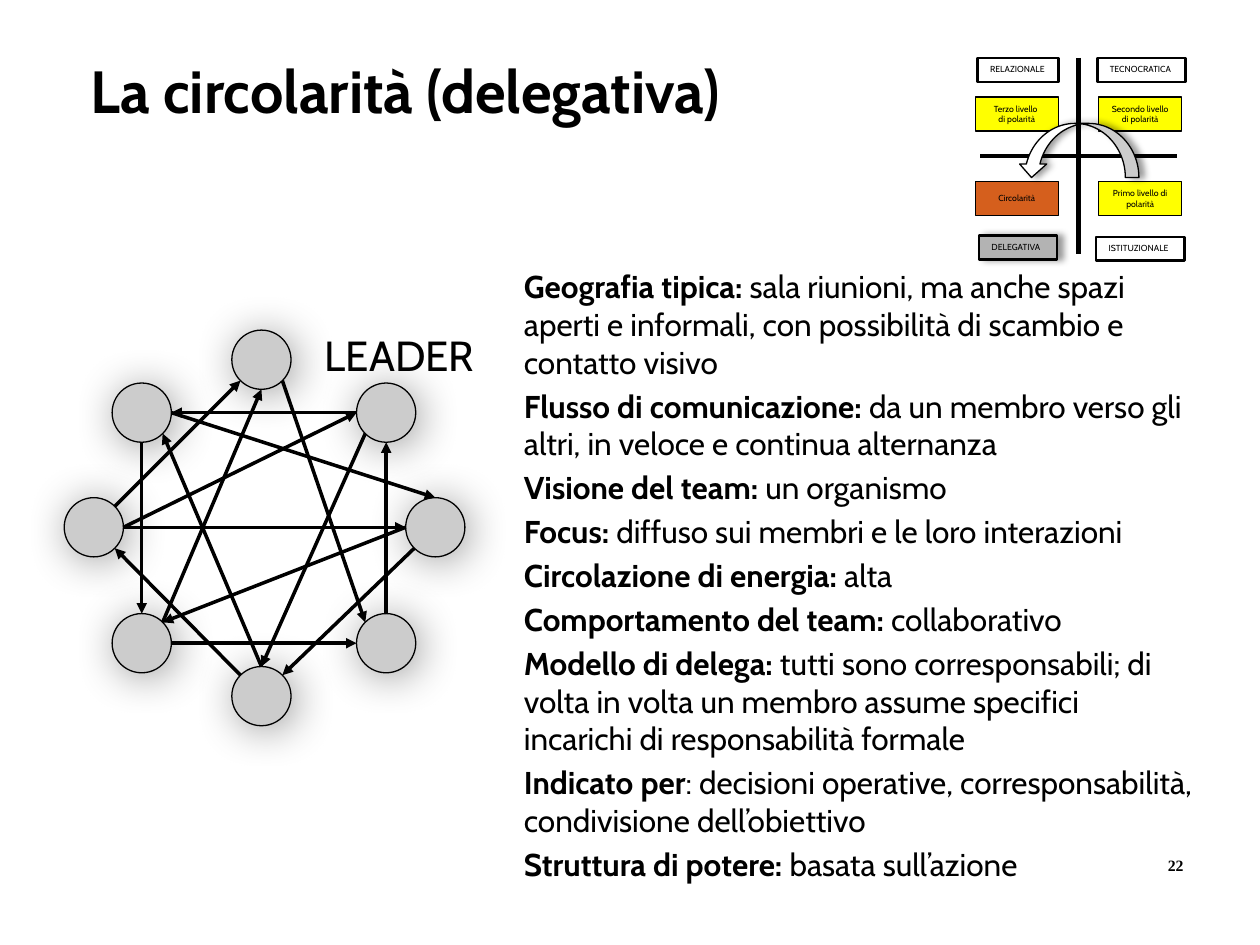
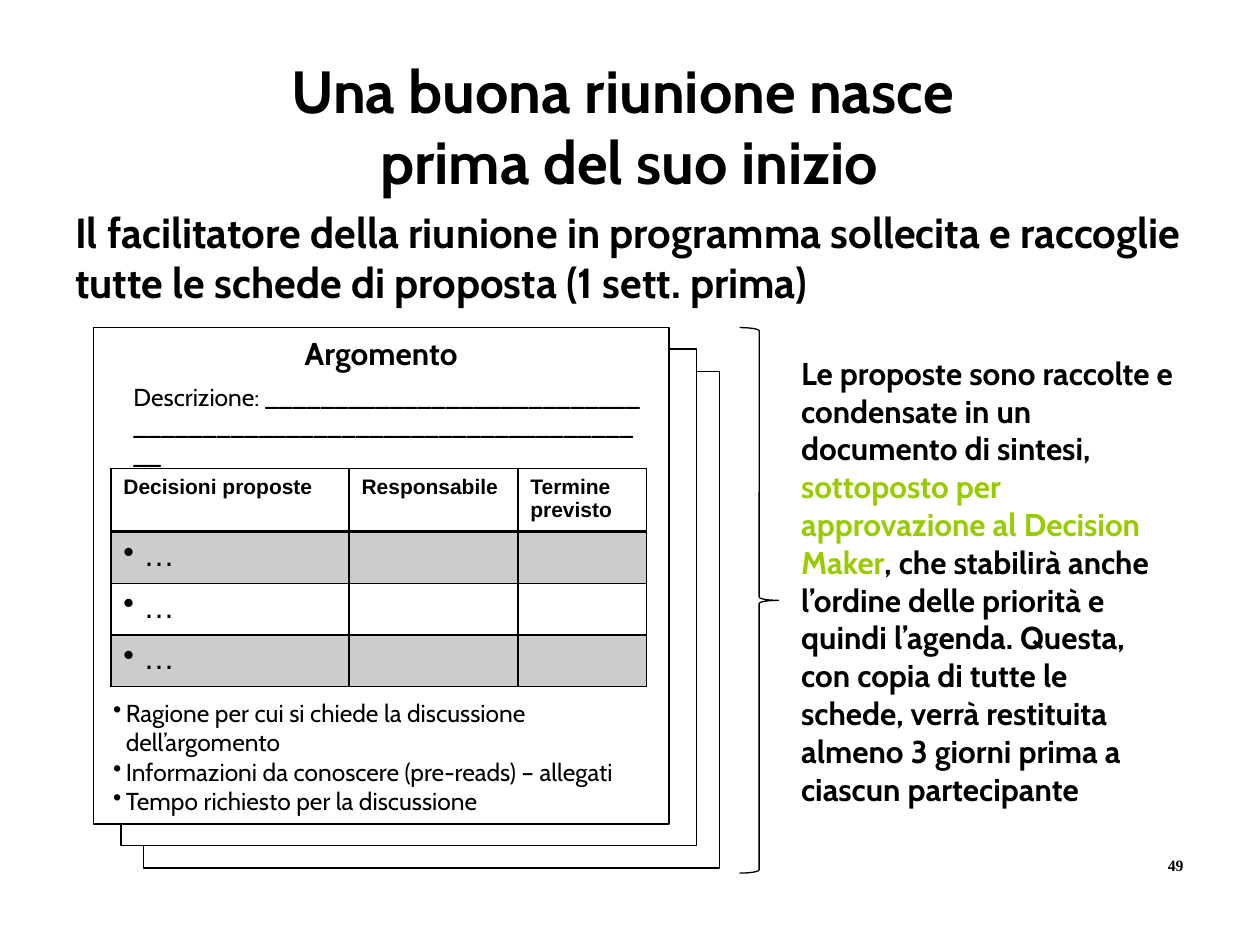
from math import cos, radians, sin

from lxml import etree
from pptx import Presentation
from pptx.dml.color import RGBColor
from pptx.enum.shapes import MSO_CONNECTOR, MSO_SHAPE
from pptx.enum.text import MSO_ANCHOR, MSO_AUTO_SIZE, PP_ALIGN
from pptx.oxml.ns import qn
from pptx.util import Inches, Pt

RECTANGLE, OVAL = MSO_SHAPE.RECTANGLE, MSO_SHAPE.OVAL
CURVED_ARROW, BRACE = MSO_SHAPE.CURVED_UP_ARROW, MSO_SHAPE.RIGHT_BRACE
STRAIGHT = MSO_CONNECTOR.STRAIGHT
LEFT, CENTER = PP_ALIGN.LEFT, PP_ALIGN.CENTER
TOP, MIDDLE = MSO_ANCHOR.TOP, MSO_ANCHOR.MIDDLE
FIT_SHAPE = MSO_AUTO_SIZE.SHAPE_TO_FIT_TEXT

BLACK, WHITE, GREY, SILVER = "000000", "FFFFFF", "CCCCCC", "B3B3B3"
YELLOW, ORANGE, GREEN = "FFFF00", "D55F1D", "99CC00"
CABIN, ARIAL, TIMES = "Cabin", "Arial", "Times New Roman"


def color(hex_string):
    """Turn a hex string into a colour."""
    return RGBColor.from_string(hex_string)


def add_xml(parent, tag, **attributes):
    """Append a DrawingML element with the given attributes."""
    values = {name: str(value) for name, value in attributes.items()}
    return etree.SubElement(parent, qn("a:" + tag), values)


def write(frame, paragraphs, size=18, font=CABIN, bold=False, ink=BLACK, align=LEFT,
          anchor=TOP, wrap=True, before=0, bullet=None, indent=0):
    """Fill a text frame; a paragraph is a string or a list of (text, format) runs."""
    frame.word_wrap = wrap
    frame.vertical_anchor = anchor
    if not wrap:
        frame.auto_size = FIT_SHAPE
    for index, content in enumerate(paragraphs):
        paragraph = frame.add_paragraph() if index else frame.paragraphs[0]
        paragraph.alignment = align
        paragraph.space_before = Pt(before)
        if bullet:
            properties = paragraph._p.get_or_add_pPr()
            properties.set("marL", str(Inches(indent)))
            properties.set("indent", str(-Inches(indent)))
            add_xml(properties, "buChar", char=bullet)
        runs = [(content, {})] if isinstance(content, str) else content
        for text, changes in runs:
            run = paragraph.add_run()
            run.text = text
            run.font.name = font
            run.font.size = Pt(size)
            run.font.bold = changes.get("bold", bold)
            run.font.color.rgb = color(changes.get("ink", ink))


class Deck:
    """Holds the presentation, its style and the current slide."""

    def __init__(self):
        """Start an empty 10 by 7.5 inch presentation."""
        self.presentation = Presentation()
        self.presentation.slide_width = Inches(10)
        self.presentation.slide_height = Inches(7.5)
        self.slide = None

    def new_slide(self, number, title, left, width, align=LEFT):
        """Add a slide with its page number and title."""
        self.slide = self.presentation.slides.add_slide(self.presentation.slide_layouts[6])
        self.text(9.17, 6.74, 0.37, 0.25, [number], size=9, font=TIMES, bold=True, wrap=False)
        self.text(left, 0.38, width, 0.62, title, size=34, bold=True, align=align)

    def text(self, left, top, width, height, paragraphs, **style):
        """Add a text box."""
        box = self.slide.shapes.add_textbox(
            Inches(left), Inches(top), Inches(width), Inches(height))
        write(box.text_frame, paragraphs, **style)

    def shape(self, kind, left, top, width, height, fill=WHITE, line=0.75,
              shadow=None, paragraphs=None, **style):
        """Add an outlined shape; shadow is (blur, distance, angle)."""
        shape = self.slide.shapes.add_shape(
            kind, Inches(left), Inches(top), Inches(width), Inches(height))
        shape.shadow.inherit = False
        if fill:
            shape.fill.solid()
            shape.fill.fore_color.rgb = color(fill)
        else:
            shape.fill.background()
        shape.line.color.rgb = color(BLACK)
        shape.line.width = Pt(line)
        if shadow:
            blur, distance, angle = shadow
            effects = shape._element.spPr.find(qn("a:effectLst"))
            outer = add_xml(effects, "outerShdw", blurRad=Pt(blur), dist=Pt(distance),
                            dir=angle * 60000, algn="ctr", rotWithShape=0)
            add_xml(add_xml(outer, "srgbClr", val=BLACK), "alpha", val=40000)
        if paragraphs:
            write(shape.text_frame, paragraphs, **style)
        return shape

    def line(self, start, end, width, arrow=False):
        """Add a straight line, with an arrowhead at its end if asked."""
        connector = self.slide.shapes.add_connector(
            STRAIGHT, *(Inches(value) for value in (*start, *end)))
        connector.line.color.rgb = color(BLACK)
        connector.line.width = Pt(width)
        if arrow:
            add_xml(connector.line._get_or_add_ln(), "tailEnd", type="triangle")
        add_xml(connector._element.spPr, "effectLst")

    def border(self, cell, **widths):
        """Draw the cell borders, given as side=points."""
        properties = cell._tc.get_or_add_tcPr()
        for index, side in enumerate("LRTB"):
            edge = add_xml(properties, "ln" + side, w=Pt(widths.get(side, 1)))
            add_xml(add_xml(edge, "solidFill"), "srgbClr", val=BLACK)
            properties.insert(index, edge)

    def table(self, left, top, widths, heights, headers, first_column):
        """Add a table with a bold header and alternate grey rows."""
        table = self.slide.shapes.add_table(
            len(heights), len(widths), Inches(left), Inches(top),
            Inches(sum(widths)), Inches(sum(heights))).table
        table.first_row = table.horz_banding = False
        for column, width in zip(table.columns, widths):
            column.width = Inches(width)
        for row_index, (row, height) in enumerate(zip(table.rows, heights)):
            row.height = Inches(height)
            for column_index, cell in enumerate(row.cells):
                if row_index % 2:
                    cell.fill.solid()
                    cell.fill.fore_color.rgb = color(GREY)
                else:
                    cell.fill.background()
                self.border(cell, T=2 if row_index == 1 else 1, B=1 if row_index else 2)
                if row_index == 0:
                    write(cell.text_frame, [headers[column_index]], size=12, font=ARIAL, bold=True)
                elif column_index == 0:
                    write(cell.text_frame, [first_column], font=ARIAL, bullet="•")


def polarity_map(deck):
    """Draw the small four-quadrant map."""
    deck.line((8.56, 0.46), (8.56, 2.02), 2.5)
    deck.line((9.34, 1.24), (7.78, 1.24), 2.5)
    soft = (4, 3, 0)
    for name, left, top, width, fill, shadow in [
        ("TECNOCRATICA", 8.71, 0.46, 0.7, WHITE, None),
        ("RELAZIONALE", 7.76, 0.46, 0.64, WHITE, None),
        ("DELEGATIVA", 7.77, 1.87, 0.62, SILVER, soft),
        ("ISTITUZIONALE", 8.7, 1.88, 0.7, WHITE, None),
    ]:
        deck.shape(RECTANGLE, left, top, width, 0.19, fill, 1.5, shadow, [name],
                   size=5, wrap=False)
    for level, left, top, fill in [
        (["Secondo livello di polarità"], 8.72, 0.77, YELLOW),
        (["Terzo livello ", "di polarità"], 7.74, 0.77, YELLOW),
        (["Circolarità"], 7.74, 1.44, ORANGE),
        (["Primo livello di polarità"], 8.72, 1.44, YELLOW),
    ]:
        deck.shape(RECTANGLE, left, top, 0.66, 0.27, fill, paragraphs=level,
                   size=5, align=CENTER, anchor=MIDDLE)
    arrow = deck.shape(CURVED_ARROW, 8.08, 0.98, 0.96, 0.43, shadow=soft)
    arrow._element.spPr.xfrm.set("flipH", "1")
    arrow._element.spPr.xfrm.set("flipV", "1")


def member_ring(deck):
    """Draw the eight members and the arrows between them."""
    diameter = 0.47
    members = {"N": (1.84, 2.62), "NE": (2.83, 3.04), "E": (3.22, 3.95), "NW": (0.89, 3.04),
               "W": (0.51, 3.95), "SE": (2.83, 4.87), "SW": (0.89, 4.87), "S": (1.84, 5.29)}
    compass = ["E", "SE", "S", "SW", "W", "NW", "N", "NE"]

    def rim(member, side):
        """Find the point on a member's rim that faces a compass side."""
        left, top = members[member]
        angle = radians(45 * compass.index(side))
        return (left + diameter / 2 * (1 + cos(angle)), top + diameter / 2 * (1 + sin(angle)))

    for left, top in members.values():
        deck.shape(OVAL, left, top, diameter, diameter, GREY, shadow=(25, 3, 45))
    deck.text(2.48, 2.57, 1.42, 0.5, ["LEADER"], size=24)
    for sender, exit_side, receiver, entry_side in [
        ("NW", "S", "SW", "N"), ("NW", "E", "E", "N"), ("W", "NE", "N", "SW"),
        ("S", "N", "NW", "SE"), ("S", "NW", "W", "SE"), ("SW", "E", "SE", "W"),
        ("SW", "NE", "N", "S"), ("N", "SE", "SE", "NW"), ("E", "SW", "S", "NE"),
        ("E", "W", "SW", "NE"), ("NE", "SW", "S", "N"), ("SE", "N", "NE", "S"),
        ("NE", "W", "NW", "E"), ("W", "E", "NE", "W"), ("W", "E", "E", "W"),
    ]:
        deck.line(rim(sender, exit_side), rim(receiver, entry_side), 2, arrow=True)


def circularity_slide(deck):
    """Build the slide on circularity."""
    deck.new_slide("22", ["La circolarità (delegativa)"], 0.62, 8.79)
    polarity_map(deck)
    member_ring(deck)
    features = [
        ("Geografia tipica: ", "sala riunioni, ma anche spazi aperti e informali, "
         "con possibilità di scambio e contatto visivo"),
        ("Flusso di comunicazione: ",
         "da un membro verso gli altri, in veloce e continua alternanza"),
        ("Visione del team: ", "un organismo"),
        ("Focus: ", "diffuso sui membri e le loro interazioni"),
        ("Circolazione di energia: ", "alta"),
        ("Comportamento del team: ", "collaborativo"),
        ("Modello di delega: ", "tutti sono corresponsabili; di volta in volta un membro "
         "assume specifici incarichi di responsabilità formale"),
        ("Indicato per",
         ": decisioni operative, corresponsabilità, condivisione dell’obiettivo"),
        ("Struttura di potere: ", "basata sull’azione"),
    ]
    deck.text(4.06, 2.07, 5.51, 5.09,
              [[(label, {"bold": True}), (detail, {})] for label, detail in features],
              before=3.5)


def meeting_slide(deck):
    """Build the slide on preparing a meeting."""
    deck.new_slide("49", ["Una buona riunione nasce ", "prima del suo inizio"],
                   0.52, 8.95, CENTER)
    deck.text(0.5, 1.59, 9.06, 0.91,
              ["Il facilitatore della riunione in programma sollecita e raccoglie "
               "tutte le schede di proposta (1 sett. prima)"], size=24, bold=True)
    for left, top in [(1.14, 2.95), (0.96, 2.77), (0.74, 2.6)]:
        deck.shape(RECTANGLE, left, top, 4.57, 3.94)
    deck.text(1.75, 2.6, 2.55, 0.4, ["Argomento"], bold=True, align=CENTER)
    deck.text(0.96, 2.98, 4.25, 0.57, ["Descrizione: " + "_" * 27, "_" * 38], size=14)
    deck.table(0.88, 3.72, [1.89, 1.34, 1.02], [0.5, 0.41, 0.41, 0.41],
               ["Decisioni proposte", "Responsabile", "Termine previsto"], " …")
    deck.text(0.8, 5.49, 4.44, 1.04,
              ["Ragione per cui si chiede la discussione dell’argomento",
               "Informazioni da conoscere (pre-reads) – allegati",
               "Tempo richiesto per la discussione"], size=14, bullet="•", indent=0.1)
    deck.text(6.26, 2.76, 3.15, 4.04, [[
        ("Le proposte sono raccolte e condensate in un documento di sintesi, ", {}),
        ("sottoposto per approvazione al Decision Maker", {"ink": GREEN}),
        (", che stabilirà anche l’ordine delle priorità e quindi l’agenda. Questa, con copia "
         "di tutte le schede, verrà restituita almeno 3 giorni prima a ciascun partecipante", {}),
    ]], bold=True)
    deck.shape(BRACE, 5.87, 2.6, 0.31, 4.33, fill=None)


def main():
    """Build and save the presentation."""
    deck = Deck()
    circularity_slide(deck)
    meeting_slide(deck)
    deck.presentation.save("out.pptx")


if __name__ == "__main__":
    main()
